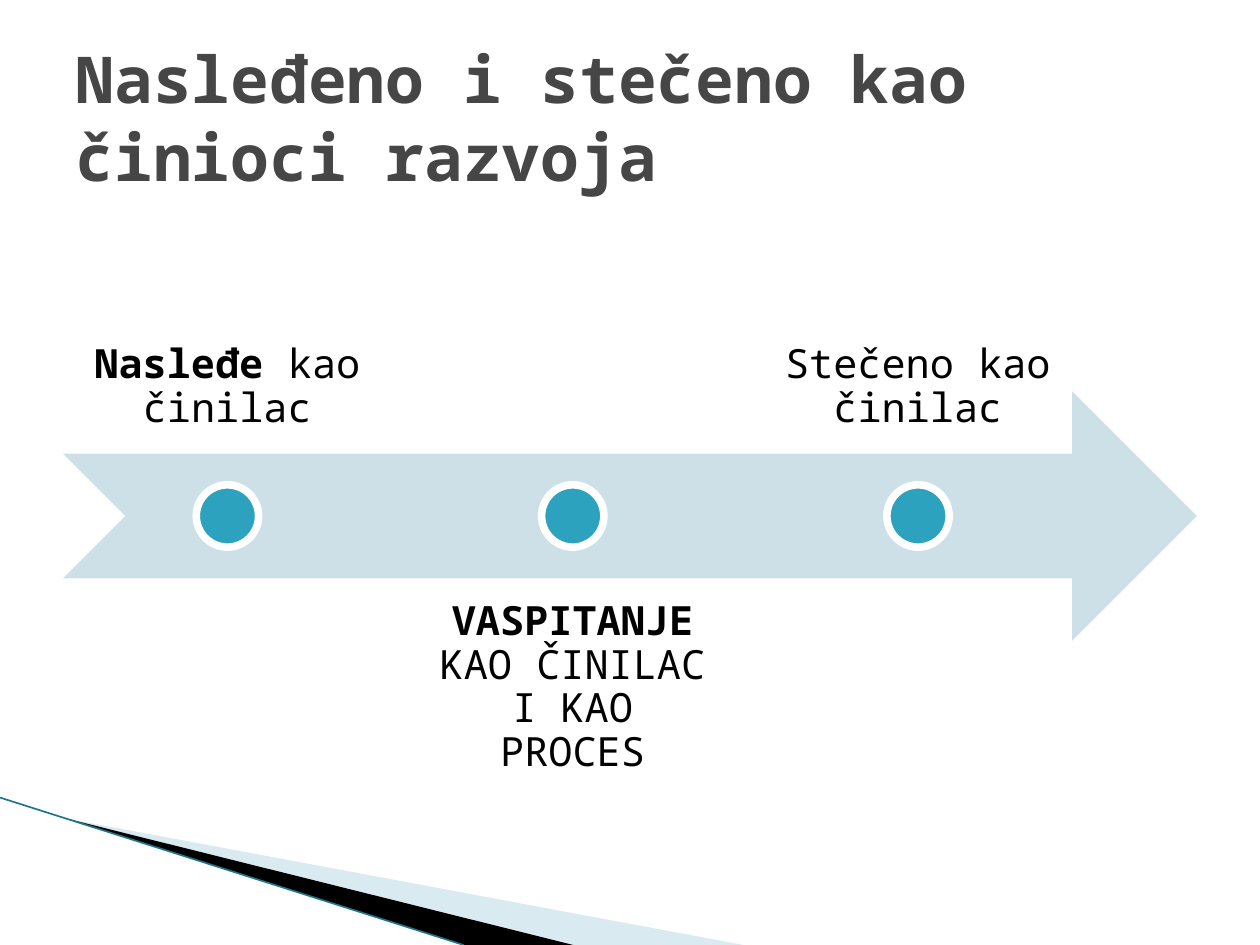
import pptx
import pptx.util
import pptx.dml.color
import pptx.enum.shapes
import pptx.enum.text
import pptx.oxml.ns
from lxml import etree

RGBColor = pptx.dml.color.RGBColor
BLACK = RGBColor(0x00, 0x00, 0x00)
WHITE = RGBColor(0xFF, 0xFF, 0xFF)
TITLE_GREY = RGBColor(0x46, 0x46, 0x46)
ARROW_BLUE = RGBColor(0xCD, 0xE0, 0xE8)
DOT_TEAL = RGBColor(0x2D, 0xA2, 0xBF)
WEDGE_BLUE = RGBColor(0xA0, 0xCB, 0xDC)
EDGE_TEAL = RGBColor(0x1F, 0x76, 0x8B)

FONT = "Noto Sans Mono"
WIDTH, HEIGHT = 10, 7.5
MARGIN = 0.05 * WIDTH
CONTENT_WIDTH = WIDTH - 2 * MARGIN
Inches = pptx.util.Inches
SHAPES = pptx.enum.shapes.MSO_SHAPE
ANCHOR = pptx.enum.text.MSO_ANCHOR
ALIGN = pptx.enum.text.PP_ALIGN

# Each milestone: bold words, then regular words
MILESTONES = [
    ("Nasleđe", " kao činilac"),
    ("VASPITANJE ", "KAO ČINILAC I KAO PROCES"),
    ("", "Stečeno kao činilac"),
]


def box_lengths(box):
    return [Inches(length) for length in box]


def style_font(font, size, color):
    font.name = FONT
    font.size = pptx.util.Pt(size)
    font.color.rgb = color


def add_wedge(slide, points, color, alpha=None):
    corners = [(Inches(x), Inches(y)) for x, y in points]
    builder = slide.shapes.build_freeform(*corners[0])
    builder.add_line_segments(corners[1:], close=True)
    wedge = builder.convert_to_shape()
    wedge.shadow.inherit = False
    wedge.fill.solid()
    wedge.fill.fore_color.rgb = color
    wedge.line.fill.background()
    if alpha is not None:
        color_element = wedge.fill._xPr.find(".//" + pptx.oxml.ns.qn("a:srgbClr"))
        etree.SubElement(color_element, pptx.oxml.ns.qn("a:alpha"), val=str(alpha * 1000))


def add_corner(slide, box):
    """Sweeping wedges in the bottom left corner."""
    left, top, width, height = box
    right, bottom = left + width, top + height
    tip = (left + 0.54, top + 0.17)
    add_wedge(slide, [tip, (right, bottom), (left + 4.56, bottom)], WEDGE_BLUE, 40)
    add_wedge(slide, [tip, (left + 4.55, bottom), (left + 3.68, bottom)], BLACK)
    edge = slide.shapes.add_connector(
        pptx.enum.shapes.MSO_CONNECTOR.STRAIGHT,
        *box_lengths((left, top, left + 3.68, bottom)))
    edge.line.color.rgb = EDGE_TEAL
    edge.line.width = pptx.util.Pt(0.95)
    etree.SubElement(edge._element.spPr, pptx.oxml.ns.qn("a:effectLst"))


def add_title(slide, box, text):
    title = slide.shapes.title
    title.left, title.top, title.width, title.height = box_lengths(box)
    frame = title.text_frame
    frame.text = text
    frame.auto_size = pptx.enum.text.MSO_AUTO_SIZE.NONE
    frame.vertical_anchor = ANCHOR.MIDDLE
    paragraph = frame.paragraphs[0]
    paragraph.alignment = ALIGN.LEFT
    style_font(paragraph.font, 36.9, TITLE_GREY)
    paragraph.font.bold = True


def add_solid(slide, kind, box, color):
    shape = slide.shapes.add_shape(kind, *box_lengths(box))
    shape.shadow.inherit = False
    shape.fill.solid()
    shape.fill.fore_color.rgb = color
    shape.line.fill.background()
    return shape


def add_label(slide, box, bold_text, plain_text, anchor):
    frame = slide.shapes.add_textbox(*box_lengths(box)).text_frame
    frame.word_wrap = True
    frame.vertical_anchor = anchor
    frame.margin_left = frame.margin_right = Inches(0.18)
    frame.margin_top = frame.margin_bottom = Inches(0.18)
    paragraph = frame.paragraphs[0]
    paragraph.alignment = ALIGN.CENTER
    paragraph.line_spacing = 0.9
    style_font(paragraph.font, 23, BLACK)
    for text, bold in ((bold_text, True), (plain_text, False)):
        if text:
            run = paragraph.add_run()
            run.text = text
            run.font.bold = bold


def add_timeline(slide, box, milestones):
    """Arrow with dots; labels alternate above and below it."""
    left, top, width, height = box
    band = 0.4 * height
    add_solid(slide, SHAPES.NOTCHED_RIGHT_ARROW,
              (left, top + 0.3 * height, width, band), ARROW_BLUE)
    label_width = 0.29 * width
    step = 1.05 * label_width
    dot = band / 4
    for index, (bold_text, plain_text) in enumerate(milestones):
        label_left = left + index * step
        above = index % 2 == 0
        label_top = top if above else top + height - band
        add_label(slide, (label_left, label_top, label_width, band),
                  bold_text, plain_text, ANCHOR.BOTTOM if above else ANCHOR.TOP)
        marker = add_solid(slide, SHAPES.OVAL,
                           (label_left + (label_width - dot) / 2,
                            top + (height - dot) / 2, dot, dot), DOT_TEAL)
        marker.line.color.rgb = WHITE
        marker.line.width = pptx.util.Pt(4.33)


def main():
    presentation = pptx.Presentation()
    presentation.slide_width = Inches(WIDTH)
    presentation.slide_height = Inches(HEIGHT)
    slide = presentation.slides.add_slide(presentation.slide_layouts[5])
    add_corner(slide, (0, 6.33, 5.9, HEIGHT - 6.33))
    add_timeline(slide, (MARGIN, 1.62, CONTENT_WIDTH, 0.66 * HEIGHT), MILESTONES)
    add_title(slide, (MARGIN, 0.04 * HEIGHT, CONTENT_WIDTH, HEIGHT / 6),
              "Nasleđeno i stečeno kao činioci razvoja")
    presentation.save("out.pptx")


if __name__ == "__main__":
    main()
